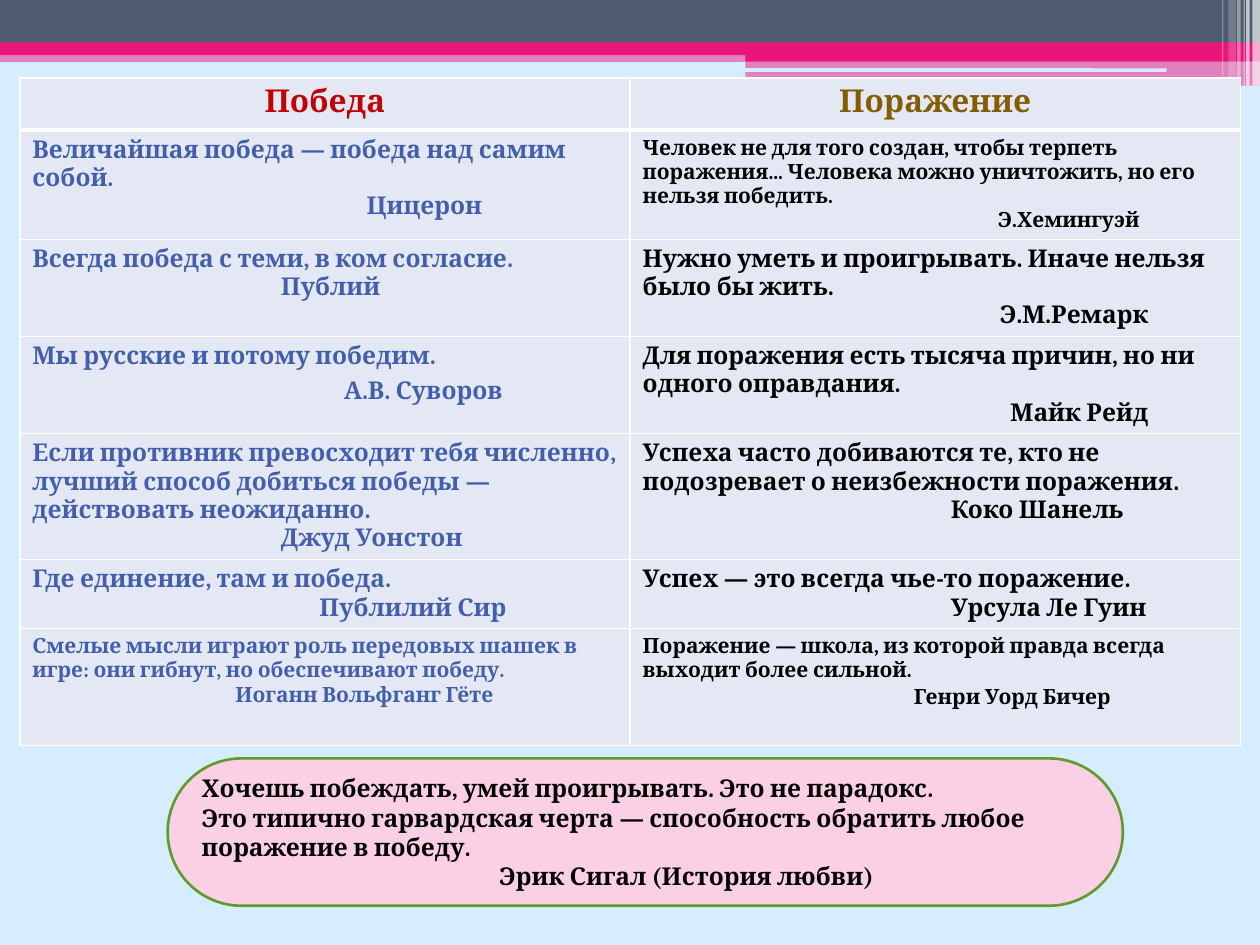
from lxml import etree
from pptx import Presentation, util as u
from pptx.dml import color
from pptx.enum import shapes, text
from pptx.oxml import ns

FONT = "Cambria"
WHITE, SKY, PINK, SLATE = "FFFFFF", "D6ECFF", "EA157A", "4E5B6F"
BLUE, BLACK, CELL = "435EAA", "000000", "E3E8F4"
RECT = shapes.MSO_SHAPE.RECTANGLE
ROUND = shapes.MSO_SHAPE.ROUNDED_RECTANGLE

BARS = [
    (0, 28.8, 720, 6.6, PINK, 50),
    (0, 0, 720, 24.5, SLATE, 100),
    (0, 24.3, 720, 7.2, PINK, 100),
    (426, 28, 294, 7, PINK, 100),
    (426, 35, 294, 14, PINK, 50),
]
GROOVES = [(425.5, 39, 241.2, 2), (580.3, 46.2, 126, 2.6)]
STRIPES = [
    (715.7, 4.3, 49, 65),
    (712.1, 2, 49, 65),
    (710.6, 0.7, 49, 60),
    (707, 2, 49, 40),
    (702, 4.3, 46, 20),
    (698.4, 0.7, 46, 30),
]
HEADINGS = [("Победа", "C00000"), ("Поражение", "835E01")]
ROW_HEIGHTS = [29.7, 62.3, 55.4, 55.4, 72, 39.4, 66.9]
QUOTES = [
    (12, [("Величайшая победа — победа над самим собой.", "Цицерон", 191, 14, 0),
          ("Человек не для того создан, чтобы терпеть поражения... Человека можно "
           "уничтожить, но его нельзя победить.", "Э.Хемингуэй", 203, 12, 0)]),
    (14, [("Всегда победа с теми, в ком согласие.", "Публий", 142, 14, 0),
          ("Нужно уметь и проигрывать. Иначе нельзя было бы жить.", "Э.М.Ремарк", 204, 14, 0)]),
    (14, [("Мы русские и потому победим.", "А.В. Суворов", 178, 14, 4),
          ("Для поражения есть тысяча причин, но ни одного оправдания.", "Майк Рейд", 210, 14, 0)]),
    (14, [("Если противник превосходит тебя численно, лучший способ добиться победы — "
           "действовать неожиданно.", "Джуд Уонстон", 142, 14, 0),
          ("Успеха часто добиваются те, кто не подозревает о неизбежности поражения.",
           "Коко Шанель", 176, 14, 0)]),
    (14, [("Где единение, там и победа.", "Публилий Сир", 164, 14, 0),
          ("Успех — это всегда чье-то поражение.", "Урсула Ле Гуин", 176, 14, 0)]),
    (12, [("Смелые мысли играют роль передовых шашек в игре: они гибнут, но обеспечивают "
           "победу.", "Иоганн Вольфганг Гёте", 116, 12, 0),
          ("Поражение — школа, из которой правда всегда выходит более сильной.",
           "Генри Уорд Бичер", 155, 12, 1.5)]),
]


def paint(fill, rgb, opacity=100):
    """Give a fill a solid colour with an opacity in percent."""
    fill.solid()
    fill.fore_color.rgb = color.RGBColor.from_string(rgb)
    if opacity < 100:
        for node in fill._xPr.iter(ns.qn("a:srgbClr")):
            etree.SubElement(node, ns.qn("a:alpha"), val=str(opacity * 1000))


def add_block(slide, kind, left, top, width, height, rgb, opacity=100):
    """Add a borderless filled shape."""
    shape = slide.shapes.add_shape(kind, u.Pt(left), u.Pt(top), u.Pt(width), u.Pt(height))
    shape.shadow.inherit = False
    shape.line.fill.background()
    paint(shape.fill, rgb, opacity)
    return shape


def style_paragraph(paragraph, size, rgb, align=text.PP_ALIGN.LEFT):
    """Format a paragraph and its runs in the bold slide font."""
    paragraph.alignment = align
    for run in paragraph.runs:
        run.font.name = FONT
        run.font.size = u.Pt(size)
        run.font.bold = True
        run.font.color.rgb = color.RGBColor.from_string(rgb)


def write_quote(frame, quote, author, indent, size, gap, rgb):
    """Write a quotation followed by its indented author."""
    frame.text = quote
    style_paragraph(frame.paragraphs[0], size, rgb)
    paragraph = frame.add_paragraph()
    paragraph.text = author
    paragraph.space_before = u.Pt(gap)
    paragraph._p.get_or_add_pPr().set("marL", str(u.Pt(indent)))
    style_paragraph(paragraph, size, rgb)


def style_cell(cell, top_width, bottom_width):
    """Fill a cell and draw its white borders."""
    paint(cell.fill, CELL)
    properties = cell._tc.get_or_add_tcPr()
    widths = {"a:lnL": 1, "a:lnR": 1, "a:lnT": top_width, "a:lnB": bottom_width}
    for index, (tag, width) in enumerate(widths.items()):
        line = etree.Element(ns.qn(tag), w=str(u.Pt(width)))
        solid = etree.SubElement(line, ns.qn("a:solidFill"))
        etree.SubElement(solid, ns.qn("a:srgbClr"), val=WHITE)
        properties.insert(index, line)


def add_banner(slide):
    """Draw the bars, grooves and stripes at the top of the slide."""
    for bar in BARS:
        add_block(slide, RECT, *bar)
    for groove in GROOVES:
        add_block(slide, ROUND, *groove, SKY)
    for left, width, height, opacity in STRIPES:
        add_block(slide, RECT, left, 0, width, height, WHITE, opacity)


def add_quote_table(slide):
    """Add the table of quotations on victory and defeat."""
    table = slide.shapes.add_table(len(ROW_HEIGHTS), 2, u.Pt(11.3), u.Pt(44.6),
                                   u.Pt(697.6), u.Pt(sum(ROW_HEIGHTS))).table
    table.horz_banding = False
    for row, height in zip(table.rows, ROW_HEIGHTS):
        row.height = u.Pt(height)
    for column, (heading, rgb) in enumerate(HEADINGS):
        cell = table.cell(0, column)
        cell.text_frame.text = heading
        style_paragraph(cell.text_frame.paragraphs[0], 18, rgb, text.PP_ALIGN.CENTER)
        style_cell(cell, 1, 3)
    for row, (_, pair) in enumerate(QUOTES, 1):
        for column, (quote, rgb) in enumerate(zip(pair, (BLUE, BLACK))):
            cell = table.cell(row, column)
            write_quote(cell.text_frame, *quote, rgb)
            style_cell(cell, 3 if row == 1 else 1, 1)


def add_closing_quote(slide):
    """Add the rounded panel with the closing quotation."""
    panel = add_block(slide, ROUND, 95.8, 433.4, 545.8, 84.2, "FBD0E4")
    panel.adjustments[0] = 0.5
    paint(panel.line.fill, "5E9B2C")
    panel.line.width = u.Pt(1.5)
    frame = panel.text_frame
    frame.word_wrap = True
    frame.vertical_anchor = text.MSO_ANCHOR.MIDDLE
    write_quote(frame, "Хочешь побеждать, умей проигрывать. Это не парадокс.\v"
                "Это типично гарвардская черта — способность обратить любое поражение в победу.",
                "Эрик Сигал (История любви)", 170, 14, 0, BLACK)


def main():
    """Build and save the presentation."""
    presentation = Presentation()
    presentation.slide_width, presentation.slide_height = u.Pt(720), u.Pt(540)
    slide = presentation.slides.add_slide(presentation.slide_layouts[6])
    paint(slide.background.fill, SKY)
    add_banner(slide)
    add_quote_table(slide)
    add_closing_quote(slide)
    presentation.save("out.pptx")


if __name__ == "__main__":
    main()
